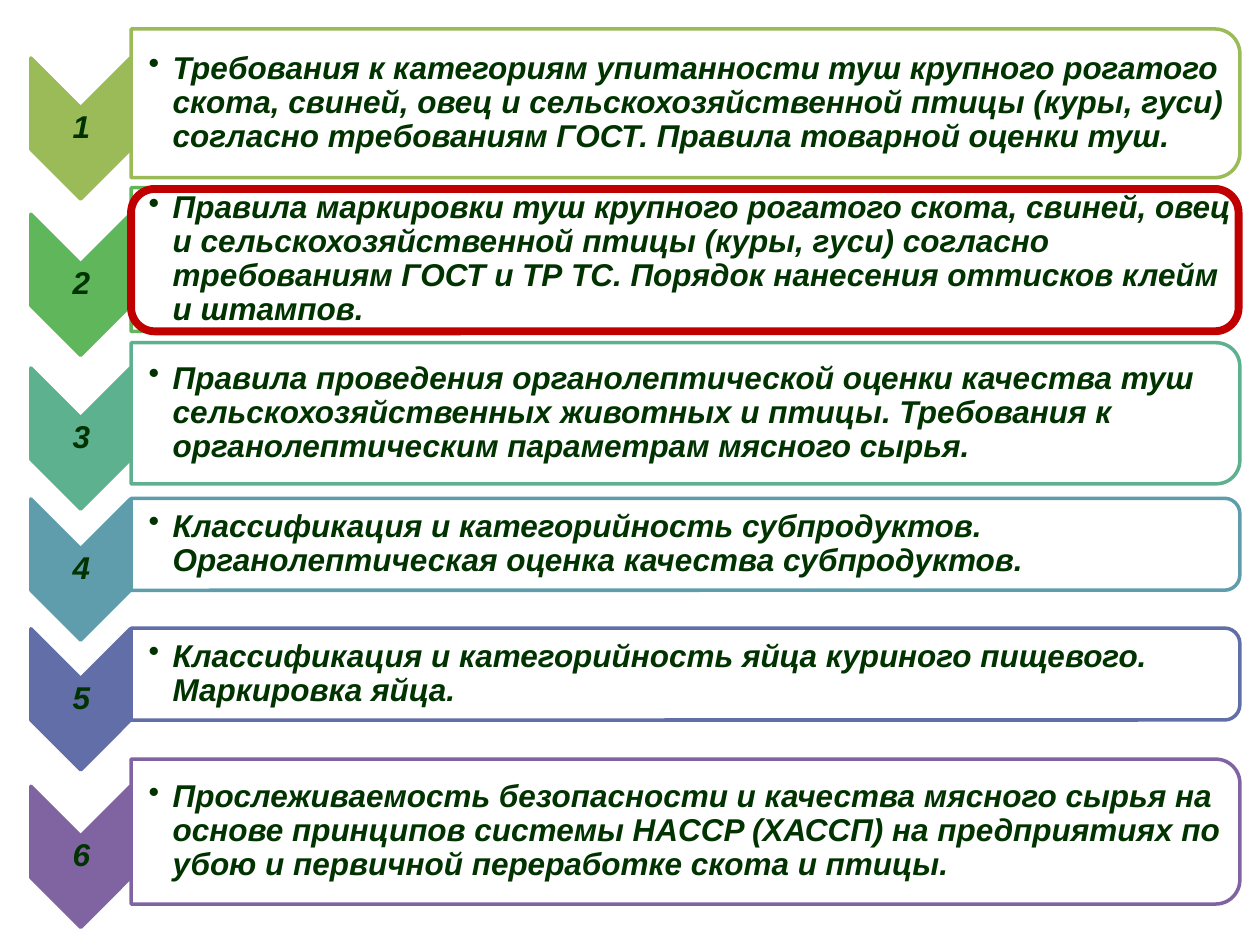
import pptx
import pptx.util
import pptx.dml.color
import pptx.enum.shapes
import pptx.enum.text
import pptx.oxml.ns
import lxml.etree

Inches = pptx.util.Inches
SHAPE = pptx.enum.shapes.MSO_SHAPE
ALIGN = pptx.enum.text.PP_ALIGN

prs = pptx.Presentation()
prs.slide_width, prs.slide_height = Inches(10), Inches(7.5)
s = prs.slides.add_slide(prs.slide_layouts[6])


def rgb(color):
    return pptx.dml.color.RGBColor.from_string(color)


def add_text(text, left, top, width, height, inset=0.01, align=ALIGN.LEFT, bullet=False):
    tf = s.shapes.add_textbox(Inches(left), Inches(top), Inches(width), Inches(height)).text_frame
    tf.word_wrap = True
    tf.vertical_anchor = pptx.enum.text.MSO_ANCHOR.MIDDLE
    tf.margin_left = Inches(inset)
    tf.margin_right = tf.margin_top = tf.margin_bottom = Inches(0.01)
    p = tf.paragraphs[0]
    p.alignment = align
    p.line_spacing = 0.9
    if bullet:
        pPr = p._p.get_or_add_pPr()
        pPr.set("marL", str(Inches(0.19)))
        pPr.set("indent", str(-Inches(0.19)))
        lxml.etree.SubElement(pPr, pptx.oxml.ns.qn("a:buChar"), char="•")
    r = p.add_run()
    r.text = text
    r.font.name, r.font.size = "Arial", pptx.util.Pt(18)
    r.font.bold = r.font.italic = True
    r.font.color.rgb = rgb("003300")


# Colour, vertical centre and height of the box, topic
topics = [
    ("9BBB59", 0.82, 1.18,
     "Требования к категориям упитанности туш крупного рогатого скота, свиней, овец и "
     "сельскохозяйственной птицы (куры, гуси) согласно требованиям ГОСТ. "
     "Правила товарной оценки туш."),
    ("5FB65B", 2.06, 1.14,
     "Правила маркировки туш крупного рогатого скота, свиней, овец и "
     "сельскохозяйственной птицы (куры, гуси) согласно требованиям ГОСТ и ТР ТС. "
     "Порядок нанесения оттисков клейм и штампов."),
    ("5DB18E", 3.28, 1.12,
     "Правила проведения органолептической оценки качества туш сельскохозяйственных "
     "животных и птицы. Требования к органолептическим параметрам мясного сырья."),
    ("5F9DAC", 4.32, 0.73,
     "Классификация и категорийность субпродуктов. "
     "Органолептическая оценка качества субпродуктов."),
    ("626EA7", 5.35, 0.73,
     "Классификация и категорийность яйца куриного пищевого. Маркировка яйца."),
    ("8064A2", 6.6, 1.15,
     "Прослеживаемость безопасности и качества мясного сырья на основе принципов системы "
     "HACCP (ХАССП) на предприятиях по убою и первичной переработке скота и птицы."),
]
chevron_x, box_x = 0.64, 5.44  # horizontal centres
chevron_length, chevron_width, box_width = 1.12, 0.79, 8.8

for number, (color, box_y, box_height, topic) in enumerate(topics, 1):
    chevron_y = box_y + 0.2
    # Both shapes are turned by 90°, so their length runs down the slide
    for kind, fill, x, y, length, width in (
        (SHAPE.CHEVRON, color, chevron_x, chevron_y, chevron_length, chevron_width),
        (SHAPE.ROUND_2_SAME_RECTANGLE, "FFFFFF", box_x, box_y, box_height, box_width),
    ):
        sp = s.shapes.add_shape(kind, Inches(x - length / 2), Inches(y - width / 2),
                                Inches(length), Inches(width))
        sp.rotation = 90
        sp.shadow.inherit = False
        sp.fill.solid()
        sp.fill.fore_color.rgb = rgb(fill)
        sp.line.color.rgb = rgb(color)
        sp.line.width = pptx.util.Pt(2)
    box_color = sp._element.spPr.find(".//" + pptx.oxml.ns.qn("a:srgbClr"))
    lxml.etree.SubElement(box_color, pptx.oxml.ns.qn("a:alpha"), val="90000")

    add_text(str(number), 0.25, chevron_y - 0.17, 0.79, 0.34, align=ALIGN.CENTER)
    text_height = box_height - 0.1
    add_text(topic, 1.04, box_y - text_height / 2, 8.75, text_height, inset=0.14, bullet=True)

highlight = s.shapes.add_shape(SHAPE.ROUNDED_RECTANGLE, Inches(1.04), Inches(1.5),
                               Inches(8.79), Inches(1.13))
highlight.shadow.inherit = False
highlight.fill.background()
highlight.line.color.rgb = rgb("C00000")
highlight.line.width = pptx.util.Pt(4.5)

prs.save("out.pptx")
